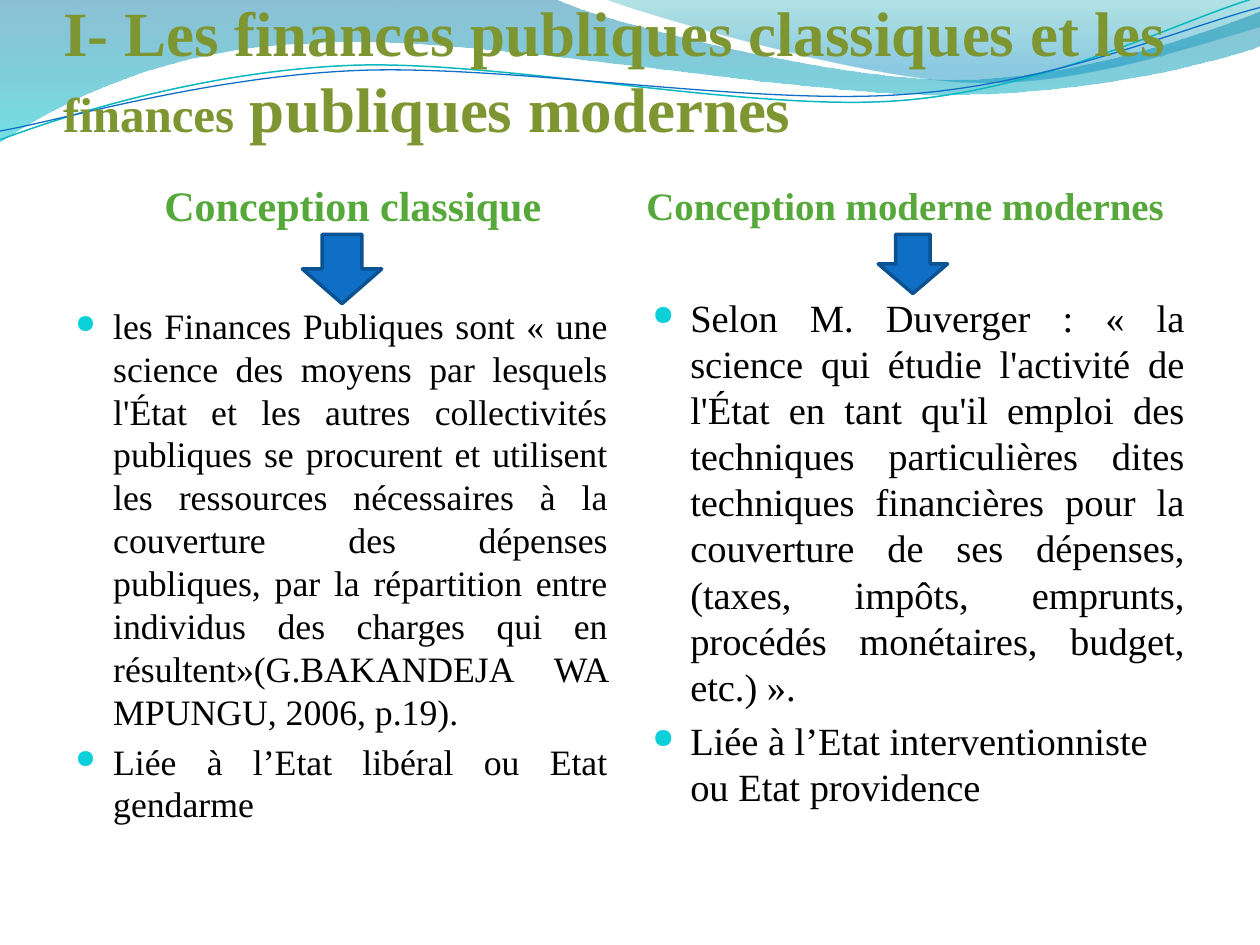
import dataclasses
import typing

import lxml.etree
import pptx
import pptx.dml.color
import pptx.enum.shapes
import pptx.enum.text
import pptx.oxml
import pptx.oxml.ns
import pptx.util

Inches = pptx.util.Inches
Pt = pptx.util.Pt
RGBColor = pptx.dml.color.RGBColor
Align = pptx.enum.text.PP_ALIGN
Anchor = pptx.enum.text.MSO_ANCHOR
qn = pptx.oxml.ns.qn

FONT = "Times New Roman"
OLIVE = RGBColor(0x7E, 0x96, 0x32)
GREEN = RGBColor(0x55, 0xA8, 0x39)
BLACK = RGBColor(0, 0, 0)
BLUE = RGBColor(0x0F, 0x6F, 0xC6)
DARK_BLUE = RGBColor(0x0B, 0x52, 0x92)
TEAL = RGBColor(0x0A, 0xB8, 0xBF)
BULLET = RGBColor(0x0B, 0xD0, 0xD9)


@dataclasses.dataclass
class Stop:
    position: int
    color: RGBColor
    opacity: int


@dataclasses.dataclass
class Wave:
    """Outline in inches: a 2-tuple is a straight step, a 6-tuple a Bezier."""
    start: tuple
    steps: list
    stops: typing.Optional[list] = None
    color: typing.Optional[RGBColor] = None
    width: float = 0


@dataclasses.dataclass
class Column:
    heading: str
    heading_left: float
    heading_size: float
    heading_align: typing.Any
    arrow: tuple
    body: tuple
    body_size: float
    points: list  # (text, alignment)


WAVES = [
    Wave((0, 0), [
        (4.4, -0.01), (4.76, 0.17, 6.64, 0.63, 7.58, 0.63),
        (8.53, 0.63, 9.58, 0.26, 10, 0.09), (10.01, 0.36),
        (9.83, 0.44, 8.7, 0.76, 7.46, 0.75), (6.22, 0.75, 3.82, 0.28, 2.57, 0.34),
        (1.29, 0.36, 0.46, 0.83, -0.01, 1.13)],
        stops=[Stop(0, RGBColor(0x00, 0x74, 0xA1), 45),
               Stop(100, RGBColor(0x00, 0xC6, 0xCF), 55)]),
    Wave((4.79, -0.01), [
        (5.09, 0.11, 6.82, 0.62, 7.69, 0.65),
        (8.56, 0.69, 9.61, 0.32, 10, 0.21), (10, 0)],
        stops=[Stop(0, RGBColor(0x00, 0xA1, 0xA9), 30),
               Stop(80, RGBColor(0x00, 0x8B, 0xBF), 45)]),
    Wave((0, 1.11), [
        (0.48, 0.93, 1.58, 0.57, 2.77, 0.52), (3.95, 0.47, 5.93, 0.89, 7.13, 0.8),
        (8.33, 0.71, 9.38, 0.15, 9.98, -0.02)], color=TEAL, width=0.85),
    Wave((0, 1.04), [
        (0.47, 0.96, 1.64, 0.61, 2.83, 0.56), (4.03, 0.51, 5.97, 0.84, 7.17, 0.75),
        (8.36, 0.67, 9.41, 0.21, 10, 0.06)], color=BLUE, width=0.75),
]

COLUMNS = [
    Column("Conception classique", 0.59, 24, Align.CENTER,
           (2.4, 1.86, 0.63, 0.55), (0.5, 2.41, 4.42, 4.29), 20.4, [
               ("les Finances Publiques sont « une science des moyens par lesquels "
                "l'État et les autres collectivités publiques se procurent et utilisent "
                "les ressources nécessaires à la couverture des dépenses publiques, par "
                "la répartition entre individus des charges qui en "
                "résultent»(G.BAKANDEJA WA MPUNGU, 2006, p.19).", Align.JUSTIFY),
               ("Liée à l’Etat libéral ou Etat gendarme", Align.JUSTIFY)]),
    Column("Conception moderne modernes", 5.08, 22.2, Align.LEFT,
           (6.97, 1.86, 0.55, 0.47), (5.08, 2.33, 4.42, 4.37), 22, [
               ("Selon M. Duverger : « la science qui étudie l'activité de l'État en "
                "tant qu'il emploi des techniques particulières dites techniques "
                "financières pour la couverture de ses dépenses,(taxes, impôts, "
                "emprunts, procédés monétaires, budget, etc.) ».", Align.JUSTIFY),
               ("Liée à l’Etat interventionniste ou Etat providence", Align.LEFT)]),
]


def bend_segments(shape, steps: list) -> None:
    """Turn the straight segments of Bezier steps into true curves."""
    segments = list(shape.element.spPr.iter(qn("a:lnTo")))
    for segment, step in zip(segments, steps):
        if len(step) == 2:
            continue
        curve = lxml.etree.Element(qn("a:cubicBezTo"))
        for x, y in zip(step[::2], step[1::2]):
            lxml.etree.SubElement(curve, qn("a:pt"), x=str(Inches(x) - shape.left),
                                  y=str(Inches(y) - shape.top))
        segment.getparent().replace(segment, curve)


def fill_gradient(shape, stops: list) -> None:
    """Fill from top to bottom with translucent stops."""
    shape.fill.background()
    marks = "".join(
        f'<a:gs pos="{stop.position * 1000}"><a:srgbClr val="{stop.color}">'
        f'<a:alpha val="{stop.opacity * 1000}"/></a:srgbClr></a:gs>' for stop in stops)
    gradient = pptx.oxml.parse_xml(
        f'<a:gradFill {pptx.oxml.ns.nsdecls("a")}><a:gsLst>{marks}</a:gsLst>'
        '<a:lin ang="5400000" scaled="0"/></a:gradFill>')
    properties = shape.element.spPr
    properties.replace(properties.find(qn("a:noFill")), gradient)


def draw_wave(page, wave: Wave) -> None:
    builder = page.shapes.build_freeform(*map(Inches, wave.start))
    ends = [tuple(map(Inches, step[-2:])) for step in wave.steps]
    builder.add_line_segments(ends, close=wave.stops is not None)
    shape = builder.convert_to_shape()
    bend_segments(shape, wave.steps)
    shape.shadow.inherit = False
    if wave.stops:
        fill_gradient(shape, wave.stops)
        shape.line.fill.background()
    else:
        shape.fill.background()
        shape.line.color.rgb = wave.color
        shape.line.width = Pt(wave.width)


def set_frame(box, anchor, insets: tuple) -> None:
    frame = box.text_frame
    frame.word_wrap = True
    frame.auto_size = pptx.enum.text.MSO_AUTO_SIZE.NONE
    frame.vertical_anchor = anchor
    (frame.margin_left, frame.margin_top,
     frame.margin_right, frame.margin_bottom) = map(Inches, insets)


def add_text(para, text: str, *, size: float, color: RGBColor, bold: bool = False) -> None:
    span = para.add_run()
    span.text = text
    span.font.name = FONT
    span.font.size = Pt(size)
    span.font.bold = bold
    span.font.color.rgb = color


def add_bullet(para) -> None:
    properties = para._p.get_or_add_pPr()
    properties.set("marL", str(Inches(0.3)))
    properties.set("indent", str(-Inches(0.3)))
    color = lxml.etree.SubElement(properties, qn("a:buClr"))
    lxml.etree.SubElement(color, qn("a:srgbClr"), val=str(BULLET))
    lxml.etree.SubElement(properties, qn("a:buSzPct"), val="72000")
    lxml.etree.SubElement(properties, qn("a:buChar"), char="●")


def draw_column(page, column: Column) -> None:
    # Heading
    box = page.shapes.add_textbox(*map(Inches, (column.heading_left, 1.31, 4.42, 0.63)))
    set_frame(box, Anchor.MIDDLE, (0.05, 0, 0.05, 0))
    para = box.text_frame.paragraphs[0]
    para.alignment = column.heading_align
    add_text(para, column.heading, size=column.heading_size, color=GREEN, bold=True)

    # Bulleted points
    box = page.shapes.add_textbox(*map(Inches, column.body))
    set_frame(box, Anchor.TOP, (0.1, 0, 0.1, 0.05))
    for index, (text, alignment) in enumerate(column.points):
        para = box.text_frame.add_paragraph() if index else box.text_frame.paragraphs[0]
        para.alignment = alignment
        para.space_before = Pt(column.body_size * 0.2)
        add_bullet(para)
        add_text(para, text, size=column.body_size, color=BLACK)

    # Arrow from heading to points
    arrow = page.shapes.add_shape(pptx.enum.shapes.MSO_SHAPE.DOWN_ARROW,
                                  *map(Inches, column.arrow))
    arrow.shadow.inherit = False
    arrow.fill.solid()
    arrow.fill.fore_color.rgb = BLUE
    arrow.line.color.rgb = DARK_BLUE
    arrow.line.width = Pt(2)


def draw_title(page) -> None:
    title = page.shapes.title
    title.left, title.top, title.width, title.height = map(Inches, (0.5, 0.3, 9, 0.85))
    set_frame(title, Anchor.BOTTOM, (0, 0.05, 0, 0))
    para = title.text_frame.paragraphs[0]
    para.alignment = Align.LEFT
    for text, size in (("I- Les finances publiques classiques et les ", 36),
                       ("finances", 28), (" publiques modernes", 36)):
        add_text(para, text, size=size, color=OLIVE, bold=True)
    # Bring the title in front of the waves
    title.element.getparent().append(title.element)


def main() -> None:
    deck = pptx.Presentation()
    deck.slide_width, deck.slide_height = Inches(10), Inches(7.5)
    page = deck.slides.add_slide(deck.slide_layouts[5])
    for wave in WAVES:
        draw_wave(page, wave)
    draw_title(page)
    for column in COLUMNS:
        draw_column(page, column)
    deck.save("out.pptx")


if __name__ == "__main__":
    main()
